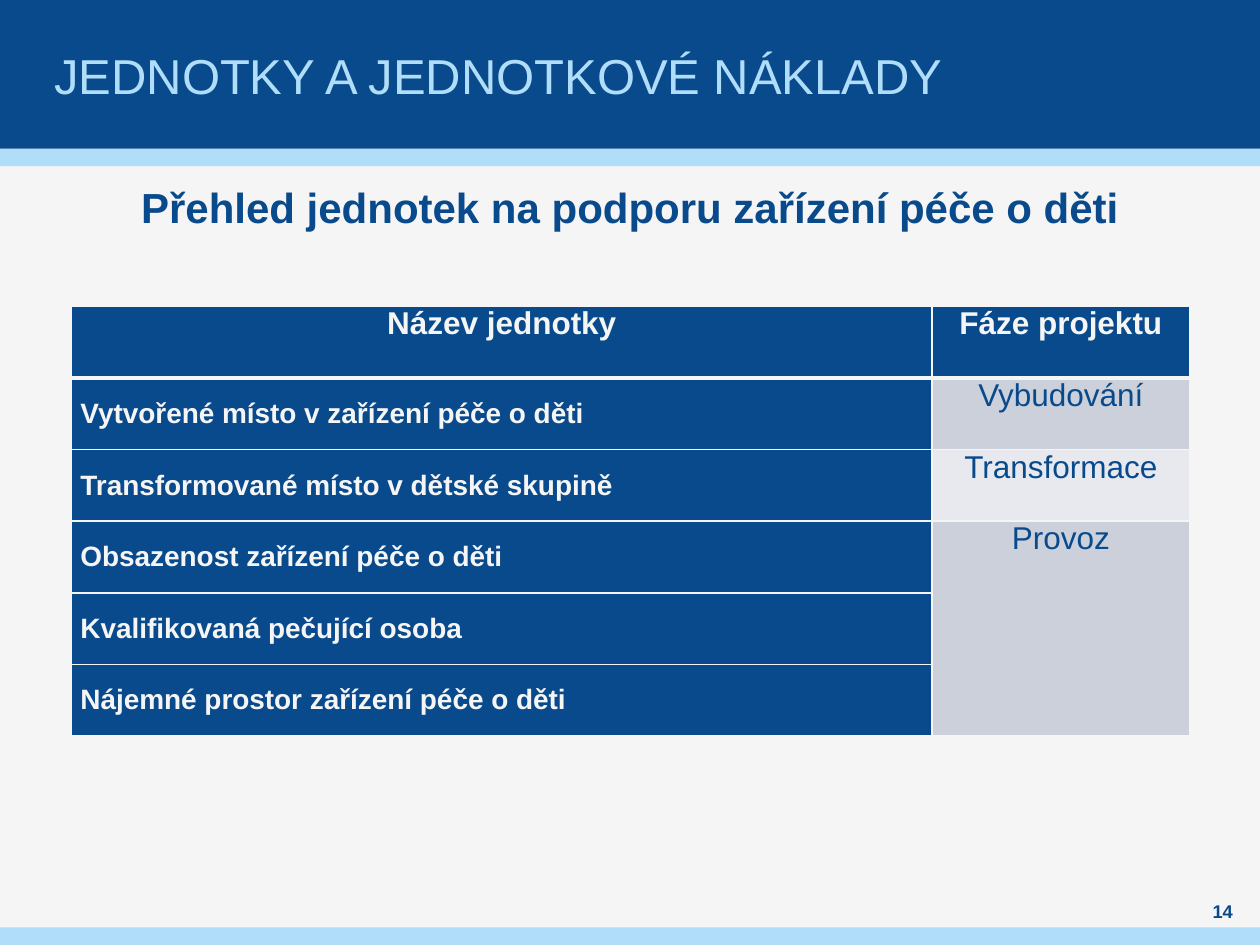
"""Build the slide listing the childcare units and their project phases."""
from lxml import etree
from pptx import Presentation
from pptx.dml.color import RGBColor
from pptx.enum import shapes, text
from pptx.oxml import ns
from pptx.util import Pt

TITLE = "JEDNOTKY A JEDNOTKOVÉ NÁKLADY"
HEADING = "Přehled jednotek na podporu zařízení péče o děti"
PAGE = "14"
HEADS = ["Název jednotky", "Fáze projektu"]
PHASES = [
    ("Vybudování", ["Vytvořené místo v\u00a0zařízení péče o děti"]),
    ("Transformace", ["Transformované místo v\u00a0dětské skupině"]),
    ("Provoz", ["Obsazenost zařízení péče o děti",
                "Kvalifikovaná pečující osoba",
                "Nájemné prostor zařízení péče o děti"]),
]
THEME = {
    "font": "Arial", "navy": "084A8B", "sky": "AFDDFA", "pale": "F5F5F5",
    "bands": ["CCD0DA", "E7E9EE"],
    "title": 28, "heading": 24, "cell": 18, "unit": 16, "page": 10.5,
}
WIDE, HIGH = 720, 540
BARS = [(85, 10, "sky"), (0, 85, "navy"), (530, 10, "sky")]
COLS, ROW = [491.5, 147.5], 40.95
MID, TOP = text.MSO_ANCHOR.MIDDLE, text.MSO_ANCHOR.TOP
LEFT, MIDDLE = text.PP_ALIGN.LEFT, text.PP_ALIGN.CENTER


def tint(fill, color):
    fill.solid()
    fill.fore_color.rgb = RGBColor.from_string(color)


def write(frame, words, size, color, bold=False, align=MIDDLE):
    frame.text = words
    para = frame.paragraphs[0]
    para.alignment = align
    font = para.runs[0].font
    font.name, font.size, font.bold = THEME["font"], Pt(size), bold
    font.color.rgb = RGBColor.from_string(color)


def label(slide, box, words, size, color, inset, bold=True, align=MIDDLE):
    frame = slide.shapes.add_textbox(*map(Pt, box)).text_frame
    frame.word_wrap = True
    frame.vertical_anchor = MID
    frame.margin_left = frame.margin_right = Pt(inset)
    frame.margin_top = frame.margin_bottom = 0
    write(frame, words, size, color, bold, align)


def border(cell, row):
    props = cell._tc.get_or_add_tcPr()
    for side in "LRTB":
        thick = (row, side) in ((0, "B"), (1, "T"))
        line = etree.SubElement(props, ns.qn(f"a:ln{side}"), w=str(Pt(3 if thick else 1)))
        fill = etree.SubElement(line, ns.qn("a:solidFill"))
        etree.SubElement(fill, ns.qn("a:srgbClr"), val=THEME["pale"])


def put(cell, words, size, color, fill, bold=True, align=MIDDLE, anchor=TOP):
    tint(cell.fill, fill)
    cell.vertical_anchor = anchor
    write(cell.text_frame, words, size, color, bold, align)


def grid(slide):
    navy, pale = THEME["navy"], THEME["pale"]
    count = 1 + sum(len(units) for _, units in PHASES)
    table = slide.shapes.add_table(
        count, 2, Pt(41), Pt(175), Pt(sum(COLS)), Pt(ROW * count)).table
    for col, width in zip(table.columns, COLS):
        col.width = Pt(width)
    for i, row in enumerate(table.rows):
        row.height = Pt(ROW)
        for cell in row.cells:
            cell.margin_left = cell.margin_right = Pt(5)
            cell.margin_top = cell.margin_bottom = 0
            border(cell, i)
    for j, head in enumerate(HEADS):
        put(table.cell(0, j), head, THEME["cell"], pale, navy)
    row = 1
    for i, (phase, units) in enumerate(PHASES):
        last = row + len(units) - 1
        if last > row:
            table.cell(row, 1).merge(table.cell(last, 1))
        put(table.cell(row, 1), phase, THEME["cell"], navy, THEME["bands"][i % 2], False)
        for k, unit in enumerate(units, row):
            put(table.cell(k, 0), unit, THEME["unit"], pale, navy, True, LEFT, MID)
        row = last + 1


def main():
    deck = Presentation()
    deck.slide_width, deck.slide_height = Pt(WIDE), Pt(HIGH)
    slide = deck.slides.add_slide(deck.slide_layouts[6])
    tint(slide.background.fill, THEME["pale"])
    for top, high, color in BARS:
        bar = slide.shapes.add_shape(
            shapes.MSO_SHAPE.RECTANGLE, 0, Pt(top), Pt(WIDE), Pt(high))
        bar.shadow.inherit = False
        tint(bar.fill, THEME[color])
        bar.line.fill.background()
    label(slide, (28, 0, 663, 85), TITLE, THEME["title"], THEME["sky"], 3, False, LEFT)
    label(slide, (680.5, 513.5, 36.5, 14.5), PAGE, THEME["page"], THEME["navy"], 0)
    label(slide, (25.5, 100, 669, 36), HEADING, THEME["heading"], THEME["navy"], 7.2)
    grid(slide)
    deck.save("out.pptx")


if __name__ == "__main__":
    main()
